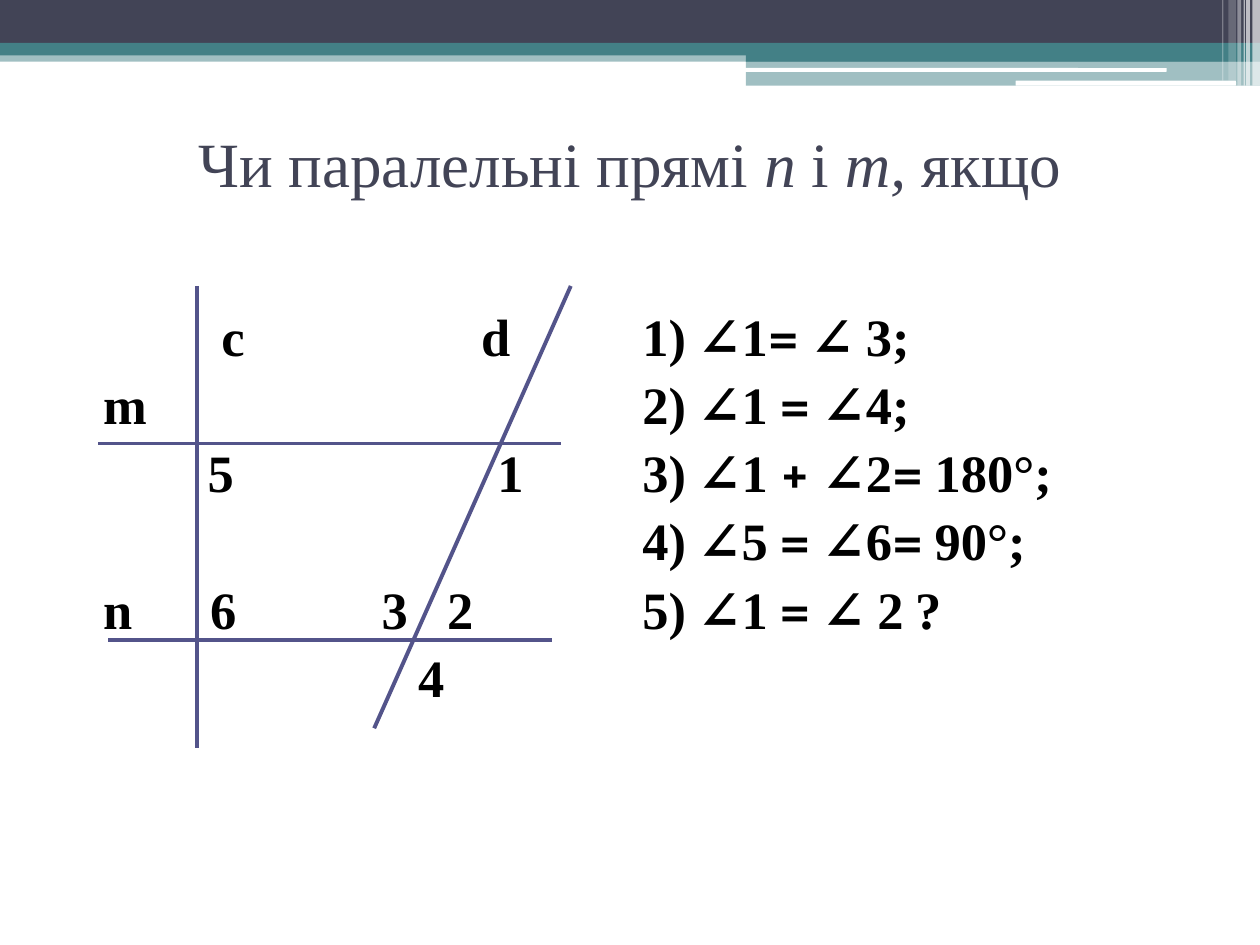
from itertools import groupby

from lxml import etree
from pptx import Presentation
from pptx.dml.color import RGBColor
from pptx.enum.shapes import MSO_CONNECTOR, MSO_SHAPE
from pptx.enum.text import MSO_ANCHOR, PP_ALIGN
from pptx.oxml.ns import qn
from pptx.util import Inches, Pt

SERIF, MATH = "Times New Roman", "Cambria"
NAVY, TEAL, WHITE, BLACK, VIOLET = "424456", "438086", "FFFFFF", "000000", "53548A"

BANDS = [
    (0, 0.4, 10, 0.09, TEAL, 50),
    (0, 0, 10, 0.34, NAVY, 100),
    (0, 0.34, 10, 0.1, TEAL, 100),
    (5.92, 0.39, 4.08, 0.1, TEAL, 100),
    (5.92, 0.48, 4.08, 0.2, TEAL, 50),
]
ROUNDED_BARS = [(5.91, 0.54, 3.35, 0.03), (8.06, 0.64, 1.75, 0.04)]
STRIPES = [
    (9.94, 0.06, 0.68, 65),
    (9.89, 0.03, 0.68, 65),
    (9.87, 0.01, 0.68, 60),
    (9.82, 0.03, 0.68, 40),
    (9.75, 0.06, 0.64, 20),
    (9.7, 0.01, 0.64, 30),
]
GEOMETRY_LINES = [
    (0.78, 3.52, 4.45, 3.52),
    (0.86, 5.08, 4.38, 5.08),
    (1.56, 2.27, 1.56, 5.94),
    (2.97, 5.78, 4.53, 2.27),
]
CONDITION_TAB = 4.5
ROWS = [
    ([(1.16, "с"), (3.22, "d")], "1) ∠1= ∠ 3;"),
    ([(0.22, "m")], "2) ∠1 = ∠4;"),
    ([(1.05, "5"), (3.35, "1")], "3) ∠1 + ∠2= 180°;"),
    ([], "4) ∠5 = ∠6= 90°;"),
    ([(0.22, "n"), (1.07, "6"), (2.43, "3"), (2.95, "2")], "5) ∠1 = ∠ 2 ?"),
    ([(2.72, "4")], ""),
]


def color(value):
    """Return the colour for a hex string."""
    return RGBColor.from_string(value)


def add_bar(slide, left, top, width, height, fill, opacity=100, kind=MSO_SHAPE.RECTANGLE):
    """Add a borderless bar with the given opacity in percent."""
    shape = slide.shapes.add_shape(kind, Inches(left), Inches(top), Inches(width), Inches(height))
    shape.shadow.inherit = False
    shape.line.fill.background()
    shape.fill.solid()
    shape.fill.fore_color.rgb = color(fill)
    if opacity < 100:
        fill_color = shape.fill._xPr.find(qn("a:solidFill"))[0]
        etree.SubElement(fill_color, qn("a:alpha")).set("val", str(opacity * 1000))


def add_header(slide):
    """Add the bands, rounded bars and stripes along the top edge."""
    for band in BANDS:
        add_bar(slide, *band)
    for bar in ROUNDED_BARS:
        add_bar(slide, *bar, WHITE, kind=MSO_SHAPE.ROUNDED_RECTANGLE)
    for left, width, height, opacity in STRIPES:
        add_bar(slide, left, 0, width, height, WHITE, opacity)


def fill_title(slide):
    """Place the title and set the line names in italics."""
    title = slide.shapes.title
    title.left, title.top = Inches(0.5), Inches(0.77)
    title.width, title.height = Inches(9), Inches(1.03)
    title.text_frame.vertical_anchor = MSO_ANCHOR.MIDDLE
    paragraph = title.text_frame.paragraphs[0]
    paragraph.alignment = PP_ALIGN.CENTER
    paragraph.font.size = Pt(36)
    paragraph.font.name = SERIF
    paragraph.font.color.rgb = color(NAVY)
    for text, italic in [("Чи паралельні прямі ", False), ("n", True), (" i ", False),
                         ("m, ", True), ("якщо", False)]:
        run = paragraph.add_run()
        run.text = text
        run.font.italic = italic


def set_tabs(paragraph, positions):
    """Give a paragraph left tab stops at the positions in inches."""
    tabs = etree.Element(qn("a:tabLst"))
    for position in positions:
        etree.SubElement(tabs, qn("a:tab"), pos=str(Inches(position)), algn="l")
    properties = paragraph._p.get_or_add_pPr()
    properties.insert_element_before(tabs, "a:defRPr", "a:extLst")


def add_row(paragraph, labels, condition):
    """Write one row of diagram labels followed by its condition."""
    cells = labels + ([(CONDITION_TAB, condition)] if condition else [])
    paragraph.space_before = Pt(3)
    set_tabs(paragraph, [position for position, _ in cells])
    text = "".join("\t" + label for _, label in cells)
    for is_math, characters in groupby(text, lambda character: character in "∠=+ "):
        run = paragraph.add_run()
        run.text = "".join(characters)
        run.font.name = MATH if is_math else SERIF
        run.font.size = Pt(30)
        run.font.bold = True
        run.font.color.rgb = color(BLACK)


def add_body(slide):
    """Add the text with the diagram labels and the conditions."""
    box = slide.shapes.add_textbox(Inches(0.5), Inches(1.88), Inches(9), Inches(5.31))
    frame = box.text_frame
    frame.word_wrap = True
    frame.margin_top = Inches(0.53)
    for index, (labels, condition) in enumerate(ROWS):
        paragraph = frame.add_paragraph() if index else frame.paragraphs[0]
        add_row(paragraph, labels, condition)


def add_line(slide, start_x, start_y, end_x, end_y):
    """Add one straight line of the diagram."""
    line = slide.shapes.add_connector(MSO_CONNECTOR.STRAIGHT, Inches(start_x), Inches(start_y),
                                      Inches(end_x), Inches(end_y))
    line.line.color.rgb = color(VIOLET)
    line.line.width = Pt(2.25)
    etree.SubElement(line._element.spPr, qn("a:effectLst"))


def main():
    """Build and save the slide."""
    presentation = Presentation()
    presentation.slide_width, presentation.slide_height = Inches(10), Inches(7.5)
    slide = presentation.slides.add_slide(presentation.slide_layouts[5])
    add_header(slide)
    fill_title(slide)
    add_body(slide)
    for ends in GEOMETRY_LINES:
        add_line(slide, *ends)
    presentation.save("out.pptx")


if __name__ == "__main__":
    main()
